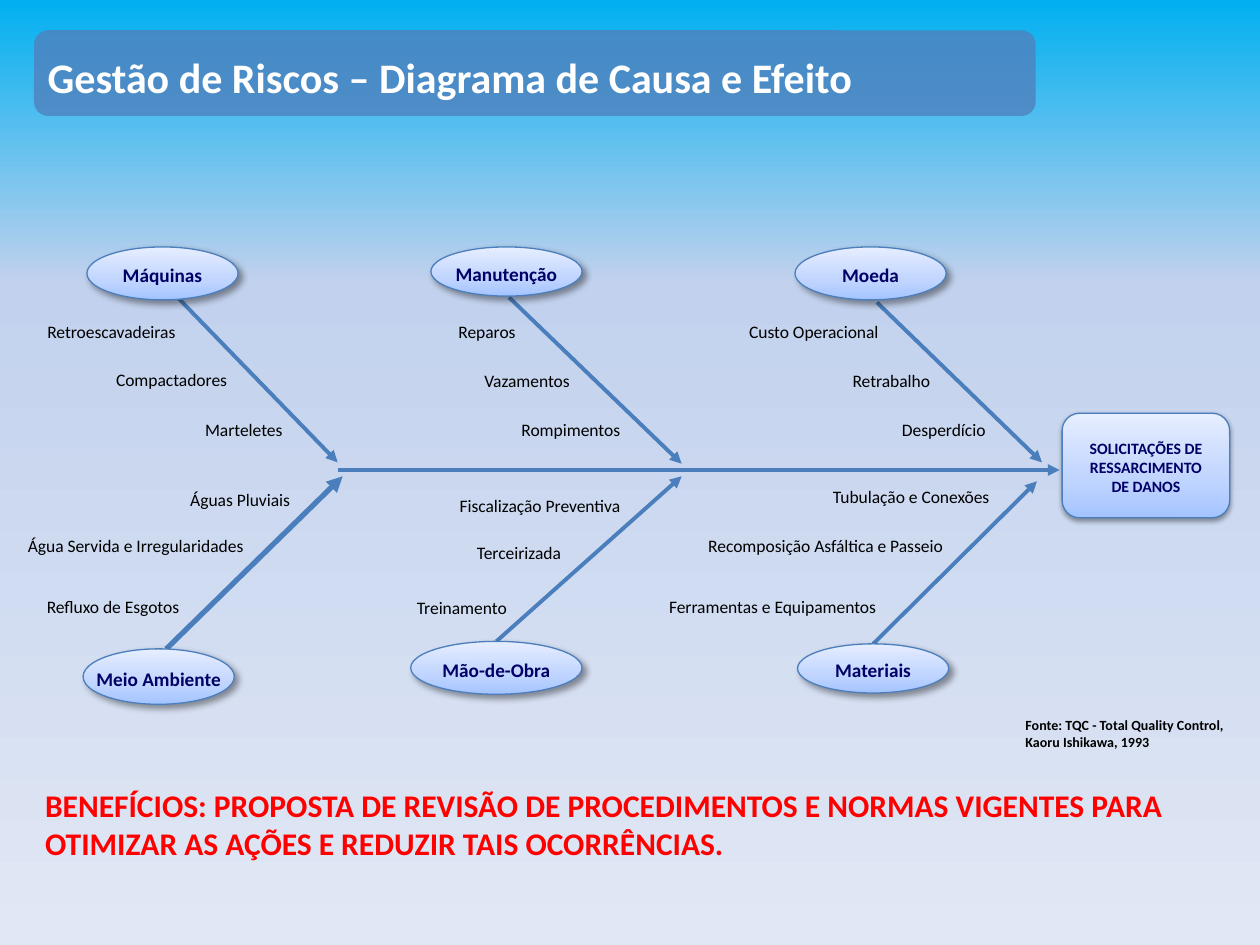
from dataclasses import dataclass

from lxml import etree
from pptx import Presentation
from pptx.dml.color import RGBColor
from pptx.enum.shapes import MSO_CONNECTOR, MSO_SHAPE
from pptx.enum.text import MSO_ANCHOR, PP_ALIGN
from pptx.oxml.ns import qn
from pptx.util import Inches, Pt

STRAIGHT = MSO_CONNECTOR.STRAIGHT
ELLIPSE = MSO_SHAPE.OVAL
ROUNDED = MSO_SHAPE.ROUNDED_RECTANGLE
LEFT, CENTER, RIGHT = PP_ALIGN.LEFT, PP_ALIGN.CENTER, PP_ALIGN.RIGHT
TOP, MIDDLE = MSO_ANCHOR.TOP, MSO_ANCHOR.MIDDLE


@dataclass(frozen=True)
class Theme:
    font: str = "Calibri"
    banner: str = "4F81BD"
    arrow: str = "4B7EBC"
    label: str = "000066"
    text: str = "000000"
    title: str = "FFFFFF"
    benefit: str = "FF0000"
    background: tuple = ((0, "00B0F0"), (30, "C2D1ED"), (100, "E1E8F5"))
    node: tuple = ((0, "A4C4FF"), (35, "BFD4FF"), (100, "E6EEFF"))
    title_size: int = 24
    benefit_size: int = 18
    label_size: int = 11
    cause_size: int = 10
    effect_size: int = 9
    source_size: int = 8


THEME = Theme()
WIDTH, HEIGHT = Inches(10), Inches(7.5)
COLUMNS, ROWS = 10, 7.5
CAUSE_HEIGHT = 0.27

TITLE = "Gestão de Riscos – Diagrama de Causa e Efeito"
EFFECT = ["SOLICITAÇÕES DE RESSARCIMENTO", "DE DANOS"]
SOURCE = ["Fonte: TQC - Total Quality Control,", "Kaoru Ishikawa, 1993"]
BENEFIT = ("BENEFÍCIOS: PROPOSTA DE REVISÃO DE PROCEDIMENTOS E NORMAS VIGENTES "
           "PARA OTIMIZAR AS AÇÕES E REDUZIR TAIS OCORRÊNCIAS.")
SPINE = ((2.68, 3.73), (8.41, 3.73))

# name, ellipse box, arrow start, arrow end, arrow weight, causes (text, right edge, top, width)
BRANCHES = [
    ("Máquinas", (0.69, 1.96, 1.2, 0.42), (1.38, 2.33), (2.68, 3.67), 2.25, [
        ("Retroescavadeiras", 1.49, 2.5, 1.4),
        ("Compactadores", 1.9, 2.88, 1.2),
        ("Marteletes", 2.34, 3.28, 1.2)]),
    ("Manutenção", (3.42, 1.96, 1.2, 0.39), (4.04, 2.36), (5.41, 3.68), 2.25, [
        ("Reparos", 4.19, 2.5, 1.2),
        ("Vazamentos", 4.62, 2.89, 1.2),
        ("Rompimentos", 5.02, 3.28, 1.2)]),
    ("Moeda", (6.31, 1.96, 1.2, 0.42), (6.96, 2.4), (8.27, 3.67), 2.25, [
        ("Custo Operacional", 7.07, 2.5, 1.69),
        ("Retrabalho", 7.48, 2.89, 1.2),
        ("Desperdício", 7.92, 3.28, 1.2)]),
    ("Meio Ambiente", (0.66, 5.15, 1.2, 0.44), (1.32, 5.15), (2.72, 3.78), 3, [
        ("Águas Pluviais", 2.4, 3.83, 2.17),
        ("Água Servida e Irregularidades", 2.03, 4.2, 2.17),
        ("Refluxo de Esgotos", 1.52, 4.68, 2.17)]),
    ("Mão-de-Obra", (3.26, 5.09, 1.36, 0.42), (3.94, 5.09), (5.41, 3.78), 2.25, [
        ("Fiscalização Preventiva", 5.02, 3.88, 1.67),
        ("Terceirizada", 4.55, 4.25, 1.67),
        ("Treinamento", 4.12, 4.69, 1.67)]),
    ("Materiais", (6.33, 5.11, 1.2, 0.39), (6.93, 5.11), (8.23, 3.82), 2.25, [
        ("Tubulação e Conexões", 7.95, 3.81, 1.67),
        ("Recomposição Asfáltica e Passeio", 7.58, 4.2, 2.17),
        ("Ferramentas e Equipamentos", 7.05, 4.68, 2.17)]),
]


def grid(*values):
    units = (WIDTH / COLUMNS, HEIGHT / ROWS)
    return [round(value * units[index % 2]) for index, value in enumerate(values)]


def add_gradient(element, fill, stops, angle):
    fill.gradient()
    gradient = element.find(".//" + qn("a:gradFill"))
    for child in list(gradient):
        gradient.remove(child)
    stop_list = etree.SubElement(gradient, qn("a:gsLst"))
    for position, color in stops:
        stop = etree.SubElement(stop_list, qn("a:gs"), pos=str(position * 1000))
        etree.SubElement(stop, qn("a:srgbClr"), val=color)
    etree.SubElement(gradient, qn("a:lin"), ang=str(angle * 60000), scaled="0")


def write(shape, lines, size, color, align=LEFT, bold=True, anchor=TOP, wrap=True):
    frame = shape.text_frame
    frame.word_wrap = wrap
    frame.vertical_anchor = anchor
    frame.text = "\n".join(lines)
    for paragraph in frame.paragraphs:
        paragraph.alignment = align
        paragraph.font.name = THEME.font
        paragraph.font.size = Pt(size)
        paragraph.font.bold = bold
        paragraph.font.color.rgb = RGBColor.from_string(color)


def add_text(slide, box, lines, size, color, **style):
    write(slide.shapes.add_textbox(*grid(*box)), lines, size, color, **style)


def add_arrow(slide, start, end, weight):
    arrow = slide.shapes.add_connector(STRAIGHT, *grid(*start, *end))
    arrow.line.color.rgb = RGBColor.from_string(THEME.arrow)
    arrow.line.width = Pt(weight)
    etree.SubElement(arrow.line._get_or_add_ln(), qn("a:tailEnd"), type="triangle")
    etree.SubElement(arrow.element.spPr, qn("a:effectLst"))


def add_node(slide, kind, box, lines, size, shadow, wrap):
    node = slide.shapes.add_shape(kind, *grid(*box))
    add_gradient(node.element, node.fill, THEME.node, 270)
    node.line.color.rgb = RGBColor.from_string(THEME.arrow)
    node.line.width = Pt(0.75)
    node.shadow.inherit = False
    alpha, blur, distance, angle = shadow
    effect = etree.SubElement(
        node.element.spPr.find(qn("a:effectLst")), qn("a:outerShdw"),
        blurRad=str(Pt(blur)), dist=str(Pt(distance)), dir=str(angle * 60000),
        rotWithShape="0")
    color = etree.SubElement(effect, qn("a:srgbClr"), val=THEME.text)
    etree.SubElement(color, qn("a:alpha"), val=str(alpha * 1000))
    frame = node.text_frame
    frame.margin_left = frame.margin_right = Inches(0.05)
    frame.margin_top, frame.margin_bottom = Inches(0.05), Inches(0.02)
    write(node, lines, size, THEME.label, align=CENTER, anchor=MIDDLE, wrap=wrap)


def add_banner(slide):
    banner = slide.shapes.add_shape(ROUNDED, *grid(0.27, 0.24, 7.95, 0.68))
    banner.shadow.inherit = False
    banner.line.fill.background()
    banner.fill.solid()
    banner.fill.fore_color.rgb = RGBColor.from_string(THEME.banner)
    color = banner.element.spPr.find(qn("a:solidFill"))[0]
    etree.SubElement(color, qn("a:alpha"), val="80000")
    add_text(slide, (0.28, 0.36, 7.48, 0.5), [TITLE], THEME.title_size, THEME.title)


def main():
    presentation = Presentation()
    presentation.slide_width, presentation.slide_height = WIDTH, HEIGHT
    slide = presentation.slides.add_slide(presentation.slide_layouts[6])
    add_gradient(slide.element, slide.background.fill, THEME.background, 90)
    add_banner(slide)

    for name, box, start, end, weight, causes in BRANCHES:
        add_arrow(slide, start, end, weight)
        add_node(slide, ELLIPSE, box, [name], THEME.label_size, (40, 4, 3, 45), False)
        for text, right, top, width in causes:
            add_text(slide, (right - width, top, width, CAUSE_HEIGHT), [text],
                     THEME.cause_size, THEME.text, align=RIGHT, bold=False)

    add_node(slide, ROUNDED, (8.43, 3.28, 1.33, 0.83), EFFECT, THEME.effect_size,
             (38, 3.1, 1.6, 90), True)
    add_arrow(slide, *SPINE, 2.25)
    add_text(slide, (8.04, 5.64, 1.85, 0.37), SOURCE, THEME.source_size, THEME.text)
    add_text(slide, (0.26, 6.19, 9.62, 0.71), [BENEFIT], THEME.benefit_size, THEME.benefit)
    presentation.save("out.pptx")


if __name__ == "__main__":
    main()
